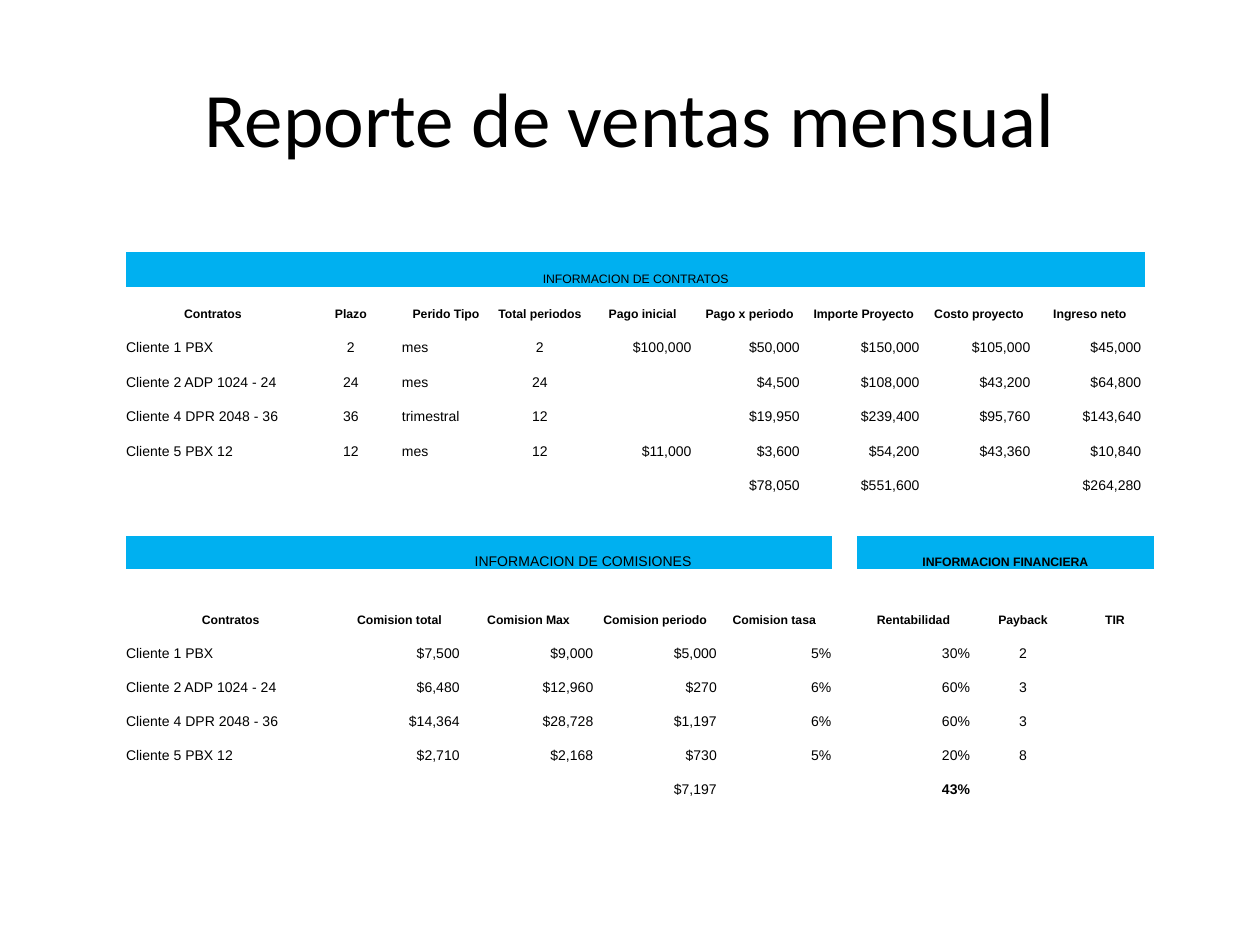
from dataclasses import dataclass

from lxml import etree
from pptx import Presentation
from pptx.dml.color import RGBColor
from pptx.enum.text import MSO_ANCHOR, PP_ALIGN
from pptx.oxml.ns import qn
from pptx.util import Inches, Pt

BOTTOM, MIDDLE = MSO_ANCHOR.BOTTOM, MSO_ANCHOR.MIDDLE
LEFT, CENTER, RIGHT = PP_ALIGN.LEFT, PP_ALIGN.CENTER, PP_ALIGN.RIGHT
ALIGN = {"l": LEFT, "c": CENTER, "r": RIGHT}
COLORS = {"text": "000000", "banner": "00B0F0"}
NO_GRID_STYLE = "{2D5ABB26-0587-4C30-8999-92F81FD0307C}"
WIDTH, HEIGHT = 10, 7.5
HEAD_SIZE, BODY_SIZE = 7, 8


@dataclass(frozen=True)
class Banner:
    first: int
    last: int
    text: str = ""
    size: int = HEAD_SIZE
    bold: bool = False


@dataclass(frozen=True)
class Report:
    x: float
    y: float
    cols: tuple[float, ...]
    row_heights: tuple[float, ...]
    aligns: str
    banners: tuple[Banner, ...]
    heads: tuple[str, ...]
    body: tuple[tuple[str, ...], ...]
    bold_cells: tuple[tuple[int, int], ...] = ()


CONTRACTS = Report(
    x=0.1,
    y=2 / HEIGHT,
    cols=(1.38, 0.81, 0.7, 0.79, 0.84, 0.86, 0.95, 0.88, 0.88),
    row_heights=(1.92 / 7,) * 7,
    aligns="lclcrrrrr",
    banners=(Banner(0, 8, "INFORMACION DE CONTRATOS"),),
    heads=("Contratos", "Plazo", "Perido Tipo", "Total periodos", "Pago inicial",
           "Pago x periodo", "Importe Proyecto", "Costo proyecto", "Ingreso neto"),
    body=(
        ("Cliente 1 PBX", "2", "mes", "2", "$100,000 ", "$50,000 ", "$150,000 ", "$105,000 ", "$45,000 "),
        ("Cliente 2 ADP 1024 - 24", "24", "mes", "24", "", "$4,500 ", "$108,000 ", "$43,200 ", "$64,800 "),
        ("Cliente 4 DPR 2048 - 36", "36", "trimestral", "12", "", "$19,950 ", "$239,400 ", "$95,760 ", "$143,640 "),
        ("Cliente 5 PBX 12", "12", "mes", "12", "$11,000 ", "$3,600 ", "$54,200 ", "$43,360 ", "$10,840 "),
        ("", "", "", "", "", "$78,050 ", "$551,600 ", "", "$264,280 "),
    ),
)

COMMISSIONS = Report(
    x=0.1,
    y=4.25 / HEIGHT,
    cols=(1.66, 1.02, 1.03, 0.98, 0.91, 0.2, 0.9, 0.84, 0.62),
    row_heights=(0.27, 0.46) + (0.27,) * 5,
    aligns="lrrrrcrcc",
    banners=(
        Banner(0, 0),
        Banner(1, 4, "INFORMACION DE COMISIONES", size=BODY_SIZE),
        Banner(6, 8, "INFORMACION FINANCIERA", bold=True),
    ),
    heads=("Contratos", "Comision total", "Comision Max", "Comision periodo", "Comision tasa",
           "", "Rentabilidad", "Payback", "TIR"),
    body=(
        ("Cliente 1 PBX", "$7,500 ", "$9,000", "$5,000", "5%", "", "30%", "2", ""),
        ("Cliente 2 ADP 1024 - 24", "$6,480 ", "$12,960", "$270", "6%", "", "60%", "3", ""),
        ("Cliente 4 DPR 2048 - 36", "$14,364 ", "$28,728", "$1,197", "6%", "", "60%", "3", ""),
        ("Cliente 5 PBX 12", "$2,710 ", "$2,168", "$730", "5%", "", "20%", "8", ""),
        ("", "", "", "$7,197", "", "", "43%", "", ""),
    ),
    bold_cells=((4, 6),),
)


def write(tf, text: str, *, size: int = BODY_SIZE, font: str = "Arial",
          bold: bool = False, align: PP_ALIGN = LEFT) -> None:
    p = tf.paragraphs[0]
    p.alignment = align
    if not text:
        etree.SubElement(p._p, qn("a:endParaRPr"), sz=str(size * 100))
        return
    r = p.add_run()
    r.text = text
    r.font.size = Pt(size)
    r.font.name = font
    r.font.bold = bold
    r.font.color.rgb = RGBColor.from_string(COLORS["text"])


def add_title(slide, text: str) -> None:
    sp = slide.shapes.add_textbox(Inches(0.05 * WIDTH), Inches(0.04 * HEIGHT),
                                  Inches(0.9 * WIDTH), Inches(HEIGHT / 6))
    tf = sp.text_frame
    tf.word_wrap = True
    tf.vertical_anchor = MIDDLE
    write(tf, text, size=44, font="Calibri", align=CENTER)


def add_report(slide, report: Report) -> None:
    n_rows, n_cols = len(report.row_heights), len(report.cols)
    sp = slide.shapes.add_table(n_rows, n_cols, Inches(report.x * WIDTH), Inches(report.y * HEIGHT),
                                Inches(sum(report.cols)), Inches(sum(report.row_heights)))
    table = sp.table
    table.first_row = table.horz_banding = False
    table._tbl.tblPr.find(qn("a:tableStyleId")).text = NO_GRID_STYLE
    for col, width in zip(table.columns, report.cols):
        col.width = Inches(width)
    for row, height in zip(table.rows, report.row_heights):
        row.height = Inches(height)
    for cell in table.iter_cells():
        cell.margin_left = cell.margin_right = cell.margin_top = cell.margin_bottom = 0
        cell.vertical_anchor = BOTTOM
        cell.fill.background()

    banner_text = {b.first: b for b in report.banners}
    for c in range(n_cols):
        b = banner_text.get(c, Banner(c, c))
        write(table.cell(0, c).text_frame, b.text, size=b.size, bold=b.bold, align=CENTER)
        write(table.cell(1, c).text_frame, report.heads[c], size=HEAD_SIZE, bold=True, align=CENTER)
    for b in report.banners:
        for c in range(b.first, b.last + 1):
            fill = table.cell(0, c).fill
            fill.solid()
            fill.fore_color.rgb = RGBColor.from_string(COLORS["banner"])
        if b.last > b.first:
            table.cell(0, b.first).merge(table.cell(0, b.last))

    for i, values in enumerate(report.body):
        for c, (text, align) in enumerate(zip(values, report.aligns)):
            write(table.cell(i + 2, c).text_frame, text, bold=(i, c) in report.bold_cells,
                  align=ALIGN[align])


def main() -> None:
    prs = Presentation()
    prs.slide_width, prs.slide_height = Inches(WIDTH), Inches(HEIGHT)
    slide = prs.slides.add_slide(prs.slide_layouts[6])
    add_title(slide, "Reporte de ventas mensual")
    for report in (CONTRACTS, COMMISSIONS):
        add_report(slide, report)
    prs.save("out.pptx")


if __name__ == "__main__":
    main()
